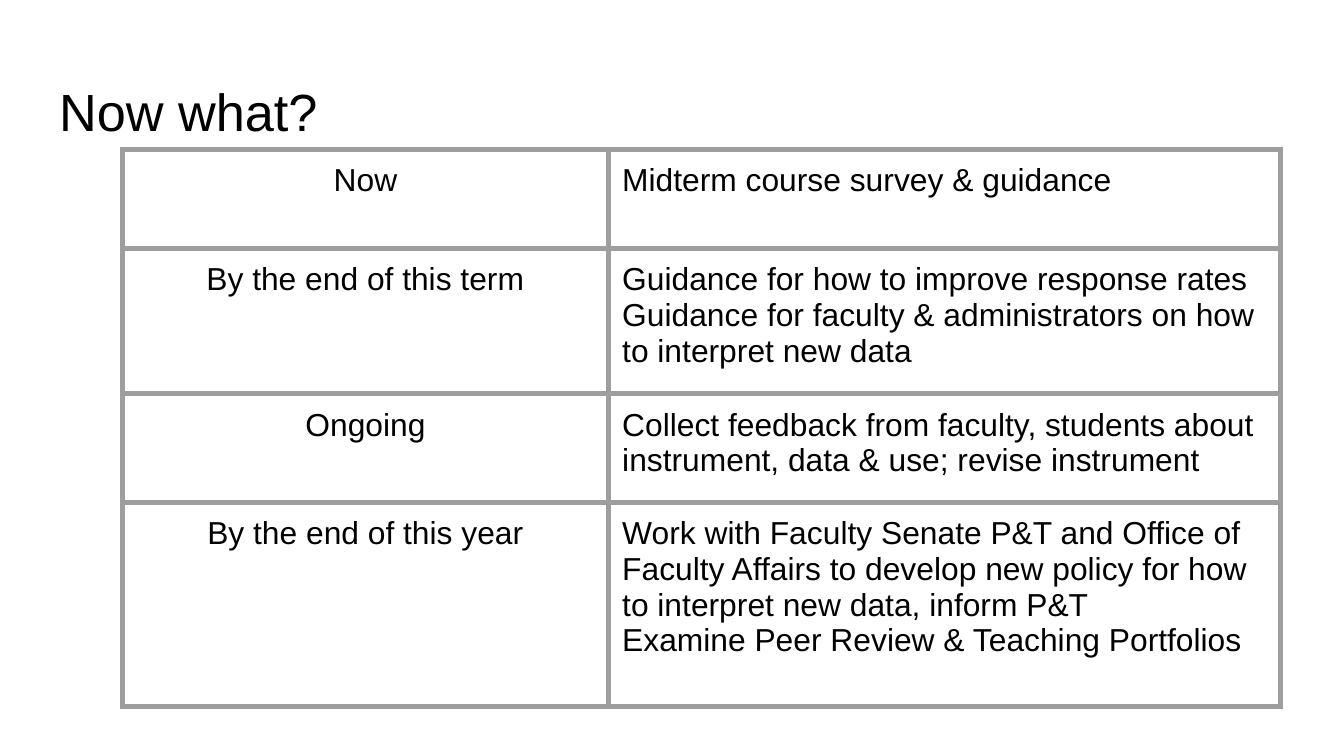
from lxml import etree
from pptx import Presentation
from pptx import util as u
from pptx.dml.color import RGBColor
from pptx.enum import text as t
from pptx.oxml import ns

WIDE = 10
HIGH = WIDE * 9 / 16
PAD = 0.1
FONT, INK, EDGE, PAPER = "Arial", "000000", "9E9E9E", "FFFFFF"
TITLE = "Now what?"
COLS = [3.62, 5]
PLAN = [
    (0.74, "Now", ["Midterm course survey & guidance"]),
    (1.08, "By the end of this term", [
        "Guidance for how to improve response rates",
        "Guidance for faculty & administrators on how to interpret new data"]),
    (0.81, "Ongoing", [
        "Collect feedback from faculty, students about instrument, data & use; revise instrument"]),
    (1.52, "By the end of this year", [
        "Work with Faculty Senate P&T and Office of Faculty Affairs to develop new policy "
        "for how to interpret new data, inform P&T",
        "Examine Peer Review & Teaching Portfolios"]),
]


def color(code):
    return RGBColor.from_string(code)


def write(frame, lines, size=17, align=t.PP_ALIGN.LEFT):
    frame.text = "\n".join(lines)
    for para in frame.paragraphs:
        para.alignment = align
        font = para.runs[0].font
        font.name, font.size, font.bold = FONT, u.Pt(size), False
        font.color.rgb = color(INK)


def inset(part):
    part.margin_left = part.margin_right = u.Inches(PAD)
    part.margin_top = part.margin_bottom = u.Inches(PAD)
    part.vertical_anchor = t.MSO_ANCHOR.TOP


def border(cell, code, width):
    props = cell._tc.get_or_add_tcPr()
    for spot, side in enumerate(("lnL", "lnR", "lnT", "lnB")):
        line = etree.Element(ns.qn("a:" + side), w=str(u.Pt(width)))
        fill = etree.SubElement(line, ns.qn("a:solidFill"))
        etree.SubElement(fill, ns.qn("a:srgbClr"), val=code)
        props.insert(spot, line)


def style(cell):
    inset(cell)
    cell.fill.solid()
    cell.fill.fore_color.rgb = color(PAPER)
    border(cell, EDGE, 3)


def head(slide):
    title = slide.shapes.title
    title.left, title.top = u.Inches(0.34), u.Inches(0.49)
    title.width, title.height = u.Inches(9.32), u.Inches(0.63)
    frame = title.text_frame
    inset(frame)
    frame.auto_size = t.MSO_AUTO_SIZE.NONE
    write(frame, [TITLE], size=28)


def grid(slide):
    tall = sum(row[0] for row in PLAN)
    box = (0.91, 1.11, sum(COLS), tall)
    table = slide.shapes.add_table(len(PLAN), len(COLS), *map(u.Inches, box)).table
    table.first_row = table.horz_banding = False
    for col, width in zip(table.columns, COLS):
        col.width = u.Inches(width)
    for row, (height, when, tasks) in zip(table.rows, PLAN):
        row.height = u.Inches(height)
        left, right = row.cells
        write(left.text_frame, [when], align=t.PP_ALIGN.CENTER)
        write(right.text_frame, tasks)
        style(left)
        style(right)


def main():
    deck = Presentation()
    deck.slide_width, deck.slide_height = u.Inches(WIDE), u.Inches(HIGH)
    slide = deck.slides.add_slide(deck.slide_layouts[5])
    head(slide)
    grid(slide)
    deck.save("out.pptx")


if __name__ == "__main__":
    main()
